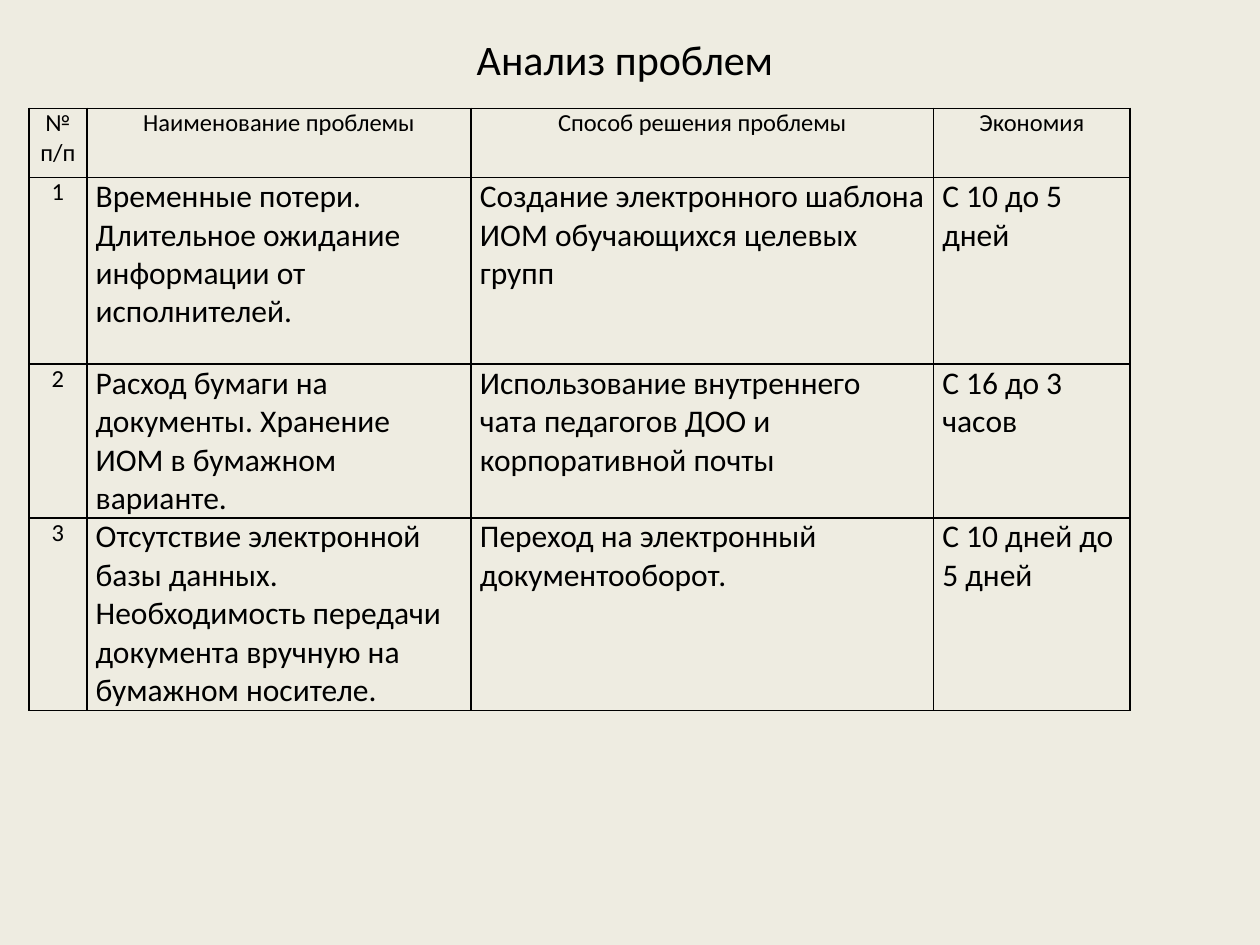
import pptx
import pptx.util
import pptx.dml.color
import pptx.enum.text
import pptx.oxml
import pptx.oxml.ns

Inches = pptx.util.Inches
Pt = pptx.util.Pt
RGB = pptx.dml.color.RGBColor.from_string
ALIGN = pptx.enum.text.PP_ALIGN
ANCHOR = pptx.enum.text.MSO_ANCHOR

THEME = {
    "font": "Calibri",
    "background": "EEECE1",
    "ink": "000000",
    "title": 24,
    "label": 14,
    "body": 18,
    "border": 1,
}


def write(tf, text, size, align=ALIGN.LEFT):
    for i, line in enumerate(text.split("\n")):
        p = tf.paragraphs[0] if i == 0 else tf.add_paragraph()
        p.alignment = align
        r = p.add_run()
        r.text = line
        r.font.name = THEME["font"]
        r.font.size = Pt(size)
        r.font.bold = False
        r.font.color.rgb = RGB(THEME["ink"])


def add_borders(cell):
    tcPr = cell._tc.get_or_add_tcPr()
    for i, side in enumerate(("lnL", "lnR", "lnT", "lnB")):
        tcPr.insert(i, pptx.oxml.parse_xml(
            f'<a:{side} {pptx.oxml.ns.nsdecls("a")} w="{Pt(THEME["border"])}">'
            f'<a:solidFill><a:srgbClr val="{THEME["ink"]}"/></a:solidFill>'
            f'</a:{side}>'))


prs = pptx.Presentation()
prs.slide_width = Inches(10)
prs.slide_height = Inches(7.5)
s = prs.slides.add_slide(prs.slide_layouts[5])
s.background.fill.solid()
s.background.fill.fore_color.rgb = RGB(THEME["background"])

title = s.shapes.title
title.left, title.top = Inches(0.23), Inches(0.23)
title.width, title.height = Inches(9.46), Inches(0.48)
tf = title.text_frame
tf.word_wrap = True
tf.auto_size = pptx.enum.text.MSO_AUTO_SIZE.NONE
tf.vertical_anchor = ANCHOR.MIDDLE
write(tf, "Анализ проблем", size=THEME["title"], align=ALIGN.CENTER)

rows = [
    ("№\nп/п", "Наименование проблемы", "Способ решения проблемы", "Экономия"),
    ("1", "Временные потери. Длительное ожидание информации от исполнителей.",
     "Создание электронного шаблона ИОМ обучающихся целевых групп",
     "С 10 до 5 дней"),
    ("2", "Расход бумаги на документы. Хранение ИОМ в бумажном варианте.",
     "Использование внутреннего чата педагогов ДОО и корпоративной почты",
     "С 16 до 3 часов"),
    ("3", "Отсутствие электронной базы данных. Необходимость передачи "
     "документа вручную на бумажном носителе.",
     "Переход на электронный документооборот.",
     "С 10 дней до 5 дней"),
]
col_widths = [0.46, 3.05, 3.67, 1.56]
row_heights = [0.55, 1.48, 1.22, 1.53]

table = s.shapes.add_table(
    len(rows), len(col_widths), Inches(0.23), Inches(0.86),
    Inches(sum(col_widths)), Inches(sum(row_heights))).table
table.first_row = False
table.horz_banding = False
for col, width in zip(table.columns, col_widths):
    col.width = Inches(width)
for row, height in zip(table.rows, row_heights):
    row.height = Inches(height)

for i, texts in enumerate(rows):
    for j, text in enumerate(texts):
        cell = table.cell(i, j)
        cell.margin_left = cell.margin_right = Inches(0.07)
        cell.margin_top = cell.margin_bottom = 0
        cell.vertical_anchor = ANCHOR.TOP
        cell.fill.background()
        add_borders(cell)
        is_label = i == 0 or j == 0
        write(cell.text_frame, text,
              size=THEME["label"] if is_label else THEME["body"],
              align=ALIGN.CENTER if is_label else ALIGN.LEFT)

prs.save("out.pptx")
